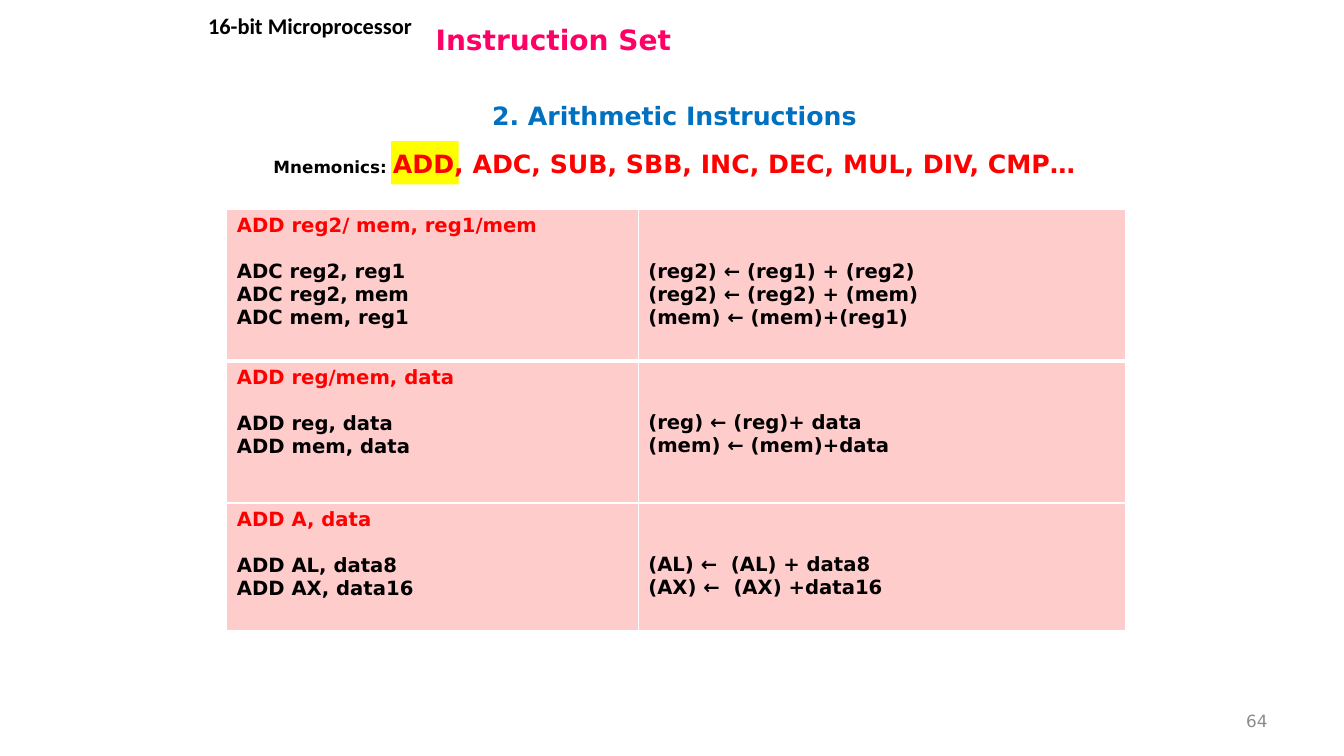
from lxml import etree
from pptx import Presentation
from pptx.dml.color import RGBColor
from pptx.enum import shapes, text
from pptx.oxml import ns
from pptx.util import Inches, Pt

BLACK = RGBColor(0, 0, 0)
RED = RGBColor(0xFF, 0, 0)
PINK = RGBColor(0xFF, 0, 0x66)
BLUE = RGBColor(0, 0x70, 0xC0)
GREY = RGBColor(0x8C, 0x8C, 0x8C)
YELLOW = RGBColor(0xFF, 0xFF, 0)
ROSE = RGBColor(0xFF, 0xCC, 0xCC)
WHITE = RGBColor(0xFF, 0xFF, 0xFF)

SANS = "DejaVu Sans"
LINE_HEIGHT = 16.3

INSTRUCTIONS = [
    ("ADD reg2/ mem, reg1/mem",
     ["ADC reg2, reg1", "ADC reg2, mem", "ADC mem, reg1"],
     ["(reg2) ← (reg1) + (reg2)", "(reg2) ← (reg2) + (mem)", "(mem) ← (mem)+(reg1)"]),
    ("ADD reg/mem, data",
     ["ADD reg, data", "ADD mem, data"],
     ["(reg) ← (reg)+ data", "(mem) ← (mem)+data"]),
    ("ADD A, data",
     ["ADD AL, data8", "ADD AX, data16"],
     ["(AL) ←  (AL) + data8", "(AX) ←  (AX) +data16"]),
]
COLUMN_WIDTHS = [4.08, 4.83]
ROW_HEIGHTS = [1.5, 1.41, 1.27]


def style(font, size, color, bold=True, name=SANS):
    font.name = name
    font.size = Pt(size)
    font.bold = bold
    font.color.rgb = color


def place(shape, left, top, width, height):
    shape.left, shape.top = Inches(left), Inches(top)
    shape.width, shape.height = Inches(width), Inches(height)


def add_label(slide, box, align, anchor=text.MSO_ANCHOR.MIDDLE):
    frame = slide.shapes.add_textbox(*map(Inches, box)).text_frame
    frame.word_wrap = True
    frame.vertical_anchor = anchor
    frame.paragraphs[0].alignment = align
    return frame.paragraphs[0]


def add_highlight(slide, box):
    highlight = slide.shapes.add_shape(shapes.MSO_SHAPE.RECTANGLE, *map(Inches, box))
    highlight.shadow.inherit = False
    highlight.fill.solid()
    highlight.fill.fore_color.rgb = YELLOW
    highlight.line.fill.background()


def set_borders(cell, bottom_width):
    properties = cell._tc.get_or_add_tcPr()
    sides = [("lnL", 1), ("lnR", 1), ("lnT", 1), ("lnB", bottom_width)]
    for index, (side, width) in enumerate(sides):
        border = etree.Element(ns.qn(f"a:{side}"), w=str(Pt(width)))
        fill = etree.SubElement(border, ns.qn("a:solidFill"))
        etree.SubElement(fill, ns.qn("a:srgbClr"), val=str(WHITE))
        properties.insert(index, border)


def fill_cell(cell, lines, bottom_width):
    cell.fill.solid()
    cell.fill.fore_color.rgb = ROSE
    set_borders(cell, bottom_width)
    cell.text_frame.text = "\n".join(lines)
    for paragraph in cell.text_frame.paragraphs:
        style(paragraph.font, 14, BLACK)


def add_instruction_table(slide):
    table = slide.shapes.add_table(
        len(INSTRUCTIONS), 2, Inches(2.25), Inches(2.08),
        Inches(sum(COLUMN_WIDTHS)), Inches(sum(ROW_HEIGHTS))).table
    table.first_row = table.horz_banding = False
    for column, width in zip(table.columns, COLUMN_WIDTHS):
        column.width = Inches(width)
    for index, (form, variants, effects) in enumerate(INSTRUCTIONS):
        table.rows[index].height = Inches(ROW_HEIGHTS[index])
        bottom_width = 3 if index == 0 else 1
        syntax, effect = table.cell(index, 0), table.cell(index, 1)
        fill_cell(syntax, [form, *variants], bottom_width)
        heading = syntax.text_frame.paragraphs[0]
        heading.font.color.rgb = RED
        heading.space_after = Pt(LINE_HEIGHT)
        fill_cell(effect, effects, bottom_width)
        effect.margin_top = Inches(0.05) + Pt(2 * LINE_HEIGHT)


def main():
    deck = Presentation()
    deck.slide_width, deck.slide_height = Inches(13.33), Inches(7.5)
    slide = deck.slides.add_slide(deck.slide_layouts[5])
    center = text.PP_ALIGN.CENTER

    add_highlight(slide, (3.88, 1.4, 0.67, 0.43))

    title = slide.shapes.title
    place(title, 4.22, 0.12, 8.78, 0.53)
    title.text_frame.text = "Instruction Set"
    title.text_frame.vertical_anchor = text.MSO_ANCHOR.MIDDLE
    title.text_frame.paragraphs[0].alignment = text.PP_ALIGN.LEFT
    style(title.text_frame.paragraphs[0].font, 20, PINK)

    section = add_label(slide, (1.96, 0.93, 9.46, 0.43), center)
    section.text = "2. Arithmetic Instructions"
    style(section.font, 18, BLUE)

    page_number = add_label(slide, (9.56, 6.95, 3.11, 0.4), text.PP_ALIGN.RIGHT)
    page_number.text = "64"
    style(page_number.font, 12, GREY, bold=False)

    topic = add_label(slide, (1.74, 0.07, 2.67, 0.37), center, text.MSO_ANCHOR.TOP)
    topic.text = "16-bit Microprocessor"
    style(topic.font, 16, BLACK, name="Calibri")

    mnemonics = add_label(slide, (1.96, 1.42, 9.46, 0.4), center, text.MSO_ANCHOR.TOP)
    for words, size, color in [
            ("Mnemonics: ", 12, BLACK),
            ("ADD, ADC, SUB, SBB, INC, DEC, MUL, DIV, CMP…", 18, RED)]:
        run = mnemonics.add_run()
        run.text = words
        style(run.font, size, color)

    add_instruction_table(slide)
    deck.save("out.pptx")


if __name__ == "__main__":
    main()
